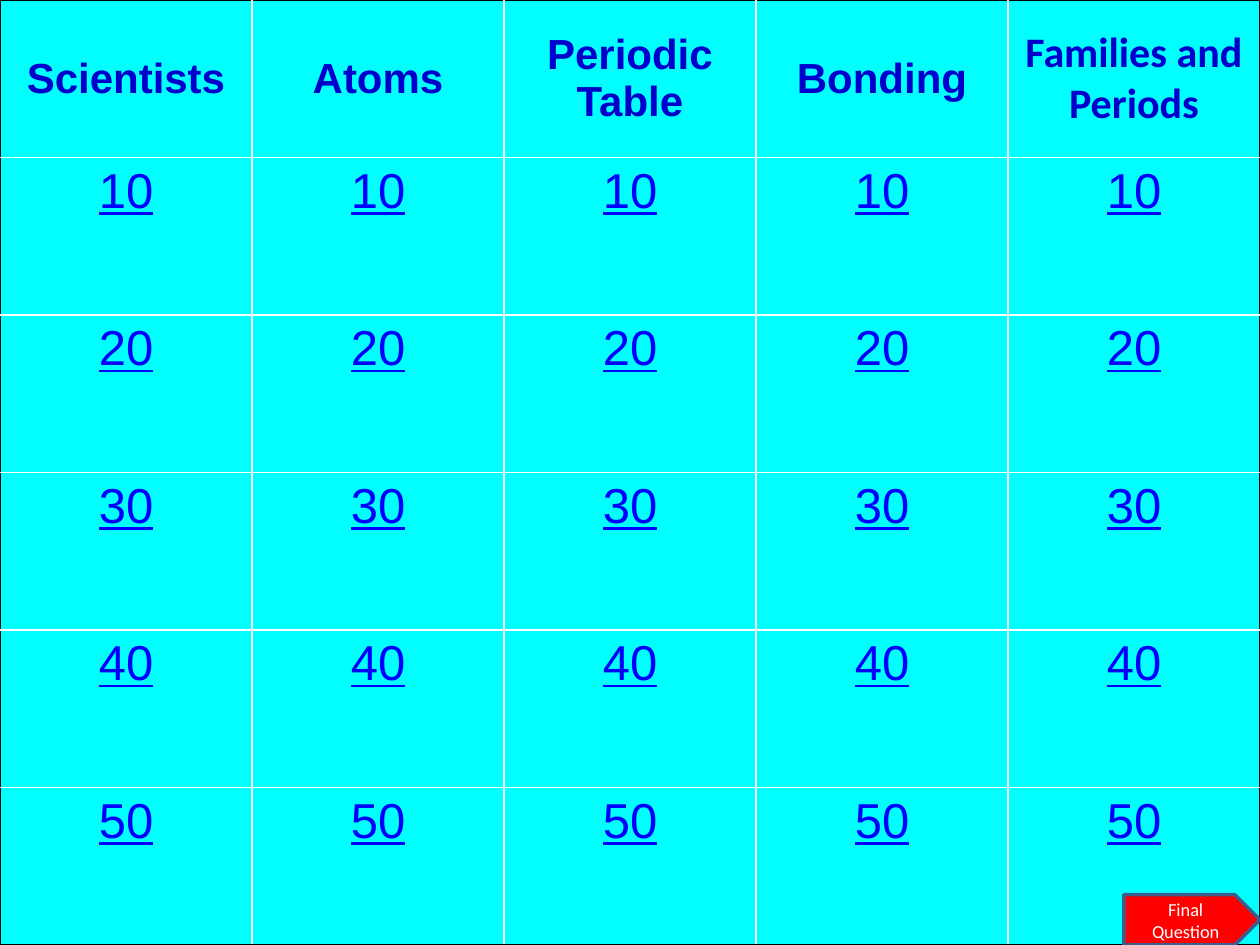
from lxml import etree
from pptx import Presentation
from pptx import util as u
from pptx.dml import color
from pptx.enum import shapes, text
from pptx.oxml import ns

COLORS = {"board": "00FFFF", "heading": "0000CC", "points": "0000FF",
          "grid": "FFFFFF", "frame": "000000", "final": "FF0000",
          "final_edge": "3A5F8C", "final_text": "FFFFFF"}
HEADING = {"size": u.Pt(24), "name": "Arial", "bold": True}
POINTS = {"size": u.Pt(28), "name": "Arial", "bold": False, "underline": True}
FINAL = {"size": u.Pt(10.5), "name": "Calibri"}


def rgb(key):
    return color.RGBColor.from_string(COLORS[key])


def write(paragraph, words, style, color_key):
    paragraph.alignment = text.PP_ALIGN.CENTER
    run = paragraph.add_run()
    run.text = words
    for attribute, value in style.items():
        setattr(run.font, attribute, value)
    run.font.color.rgb = rgb(color_key)


# Slide
deck = Presentation()
deck.slide_width, deck.slide_height = u.Pt(720), u.Pt(540)
slide = deck.slides.add_slide(deck.slide_layouts[6])
slide.background.fill.solid()
slide.background.fill.fore_color.rgb = rgb("board")

# Question board
topics = ["Scientists", "Atoms", "Periodic Table", "Bonding", "Families and Periods"]
points = [10, 20, 30, 40, 50]
last_row, last_col = len(points), len(topics) - 1
board = slide.shapes.add_table(last_row + 1, last_col + 1, 0, 0, u.Pt(720), u.Pt(540)).table
for column in board.columns:
    column.width = u.Pt(144)
for row in board.rows:
    row.height = u.Pt(90)

for r in range(last_row + 1):
    for c, topic in enumerate(topics):
        cell = board.cell(r, c)
        paragraph = cell.text_frame.paragraphs[0]
        if r == 0:
            cell.vertical_anchor = text.MSO_ANCHOR.MIDDLE
            font = "Calibri" if c == last_col else "Arial"
            write(paragraph, topic, {**HEADING, "name": font}, "heading")
        else:
            write(paragraph, str(points[r - 1]), POINTS, "points")

        # Black frame around the board, white lines inside
        on_frame = {"lnL": c == 0, "lnR": c == last_col, "lnT": r == 0, "lnB": r == last_row}
        properties = cell._tc.get_or_add_tcPr()
        for side, outer in on_frame.items():
            line = etree.SubElement(properties, ns.qn(f"a:{side}"), w=str(u.Pt(1)))
            fill = etree.SubElement(line, ns.qn("a:solidFill"))
            etree.SubElement(fill, ns.qn("a:srgbClr"), val=COLORS["frame" if outer else "grid"])
        cell.fill.solid()
        cell.fill.fore_color.rgb = rgb("board")

# Final round arrow
final = slide.shapes.add_shape(shapes.MSO_SHAPE.PENTAGON, u.Pt(642.24), u.Pt(511.2),
                               u.Pt(77.76), u.Pt(28.8))
final.shadow.inherit = False
final.fill.solid()
final.fill.fore_color.rgb = rgb("final")
final.line.color.rgb = rgb("final_edge")
final.line.width = u.Pt(2)
frame = final.text_frame
frame.word_wrap = True
frame.vertical_anchor = text.MSO_ANCHOR.MIDDLE
for margin in ("left", "right", "top", "bottom"):
    setattr(frame, f"margin_{margin}", 0)
write(frame.paragraphs[0], "Final", FINAL, "final_text")
write(frame.add_paragraph(), "Question", FINAL, "final_text")

deck.save("out.pptx")
